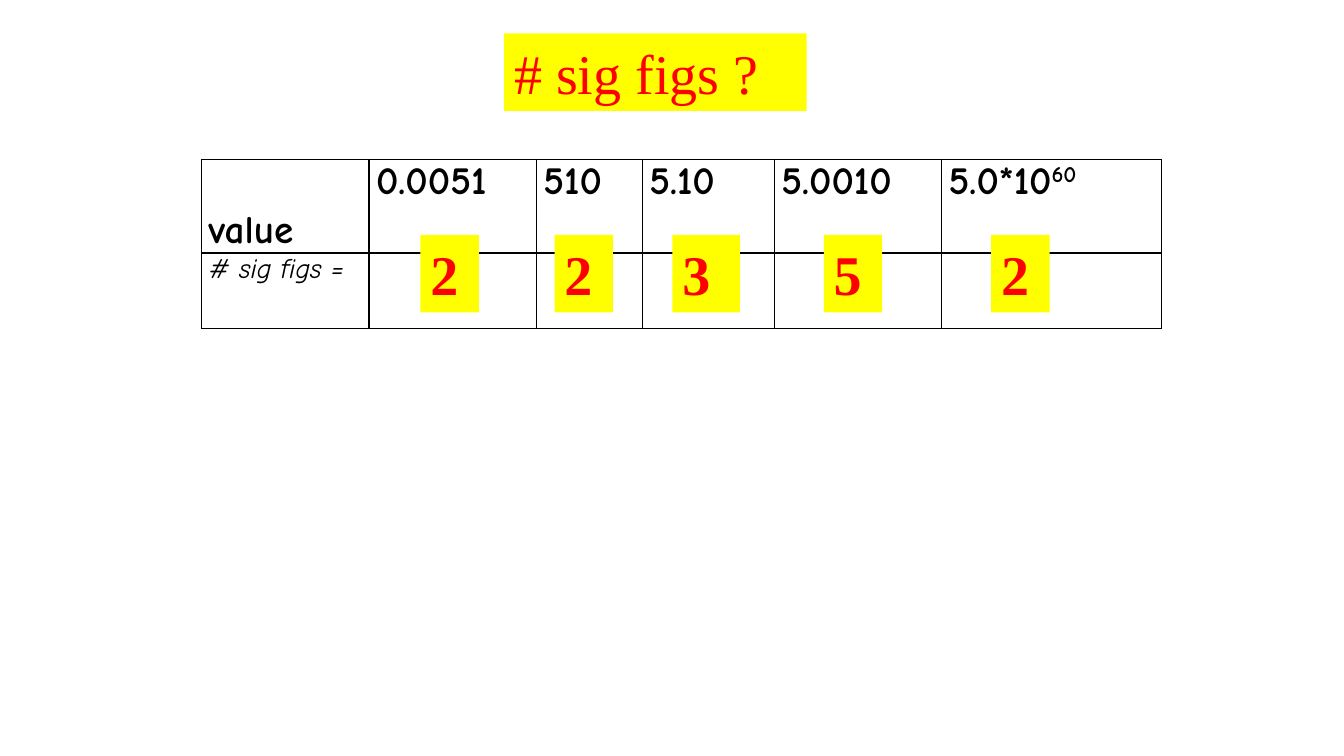
import dataclasses

import lxml.etree
import pptx
import pptx.dml.color
import pptx.enum.shapes
import pptx.enum.text
import pptx.oxml.ns
import pptx.util

Inches = pptx.util.Inches
Pt = pptx.util.Pt
ANCHOR = pptx.enum.text.MSO_ANCHOR

BLACK = pptx.dml.color.RGBColor(0x00, 0x00, 0x00)
RED = pptx.dml.color.RGBColor(0xFF, 0x00, 0x00)
YELLOW = pptx.dml.color.RGBColor(0xFF, 0xFF, 0x00)
TABLE_FONT = "Comic Neue"
LABEL_FONT = "Times New Roman"

COLUMN_WIDTHS = [1.66, 1.66, 1.05, 1.31, 1.66, 2.18]
ROW_HEIGHTS = [0.93, 0.75]
VALUES = ["0.0051", "510", "5.10", "5.0010", "5.0*10"]
EXPONENT = "60"


@dataclasses.dataclass
class Answer:
    text: str
    left: float
    width: float = 0.58


ANSWERS = [
    Answer("2", 4.17),
    Answer("2", 5.5),
    Answer("3", 6.67, 0.67),
    Answer("5", 8.17),
    Answer("2", 9.83),
]


def format_label(sp, text: str, left: float, top: float, width: float, bold: bool) -> None:
    sp.left, sp.top = Inches(left), Inches(top)
    sp.width, sp.height = Inches(width), Inches(0.77)
    sp.fill.solid()
    sp.fill.fore_color.rgb = YELLOW
    sp.line.fill.background()
    tf = sp.text_frame
    tf.text = text
    tf.word_wrap = True
    tf.auto_size = pptx.enum.text.MSO_AUTO_SIZE.NONE
    tf.vertical_anchor = ANCHOR.TOP
    p = tf.paragraphs[0]
    p.alignment = pptx.enum.text.PP_ALIGN.LEFT
    font = p.runs[0].font
    font.name, font.size, font.bold = LABEL_FONT, Pt(40), bold
    font.color.rgb = RED


def format_cell(cell) -> None:
    cell.margin_left = cell.margin_right = Inches(0.07)
    cell.margin_top = cell.margin_bottom = 0
    tc_pr = cell._tc.get_or_add_tcPr()
    qn = pptx.oxml.ns.qn
    for side in ("a:lnL", "a:lnR", "a:lnT", "a:lnB"):
        ln = lxml.etree.SubElement(tc_pr, qn(side), w=str(Pt(1)))
        fill = lxml.etree.SubElement(ln, qn("a:solidFill"))
        lxml.etree.SubElement(fill, qn("a:srgbClr"), val=str(BLACK))
    cell.fill.background()


def format_run(r, size: int, bold: bool) -> None:
    r.font.name, r.font.size = TABLE_FONT, Pt(size)
    r.font.bold, r.font.italic = bold, not bold
    r.font.color.rgb = BLACK


def add_value_table(s) -> None:
    frame = s.shapes.add_table(
        len(ROW_HEIGHTS), len(COLUMN_WIDTHS), Inches(2), Inches(1.58),
        Inches(sum(COLUMN_WIDTHS)), Inches(sum(ROW_HEIGHTS)),
    )
    table = frame.table
    table.first_row = table.horz_banding = False
    for column, width in zip(table.columns, COLUMN_WIDTHS):
        column.width = Inches(width)
    for row, height in zip(table.rows, ROW_HEIGHTS):
        row.height = Inches(height)
    for cell in table.iter_cells():
        format_cell(cell)

    for i, text in enumerate(["value"] + VALUES):
        table.cell(0, i).text_frame.text = text
    table.cell(0, 0).vertical_anchor = ANCHOR.BOTTOM
    exponent = table.cell(0, len(VALUES)).text_frame.paragraphs[0].add_run()
    exponent.text = EXPONENT
    exponent.font._element.set("baseline", "30000")
    table.cell(1, 0).text_frame.text = "# sig figs ="

    for row, size, bold in zip(table.rows, (28, 20), (True, False)):
        for cell in row.cells:
            for r in cell.text_frame.paragraphs[0].runs:
                format_run(r, size, bold)


def add_answer(s, answer: Answer) -> None:
    sp = s.shapes.add_shape(
        pptx.enum.shapes.MSO_SHAPE.RECTANGLE, 0, 0, Inches(1), Inches(1)
    )
    sp.shadow.inherit = False
    format_label(sp, answer.text, answer.left, 2.33, answer.width, True)


def main() -> None:
    prs = pptx.Presentation()
    prs.slide_width, prs.slide_height = Inches(13.33), Inches(7.5)
    s = prs.slides.add_slide(prs.slide_layouts[5])
    format_label(s.shapes.title, "# sig figs ?", 5, 0.33, 3, False)
    add_value_table(s)
    for answer in ANSWERS:
        add_answer(s, answer)
    prs.save("out.pptx")


if __name__ == "__main__":
    main()
